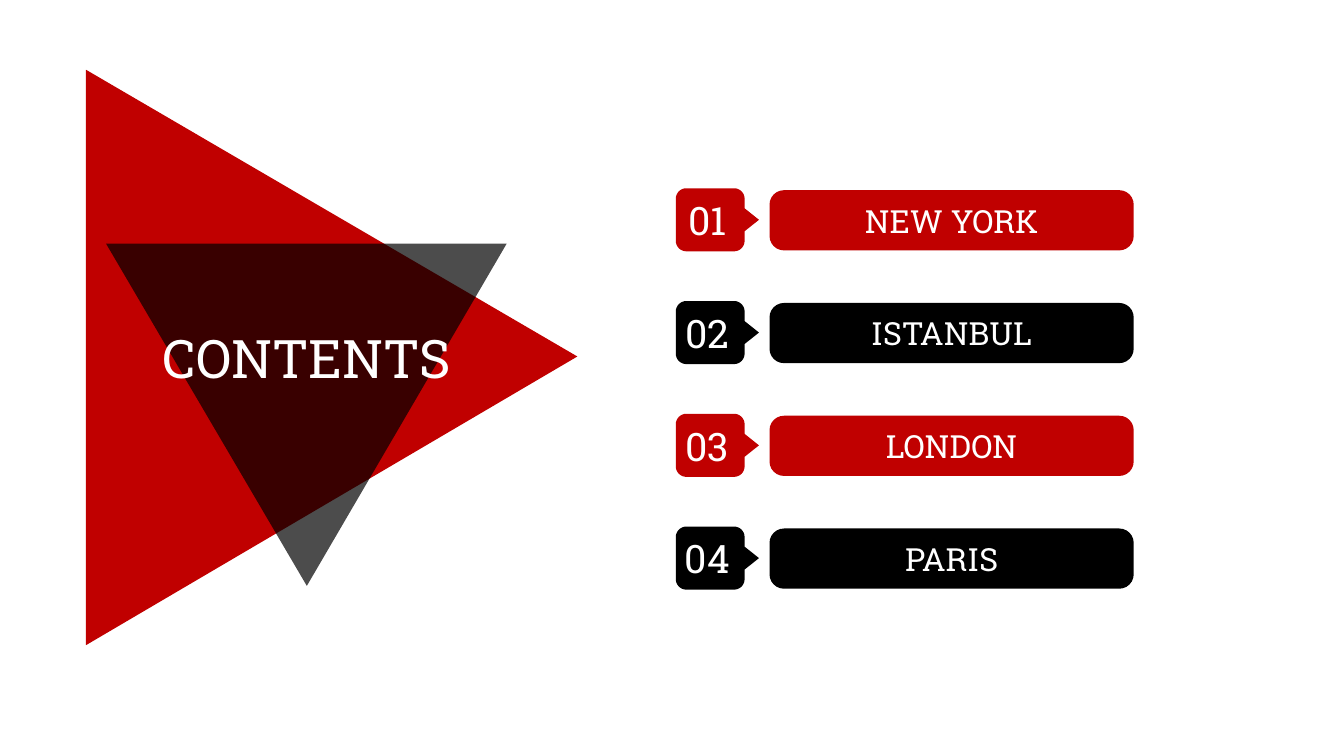
import math
from lxml import etree
from pptx import Presentation
from pptx.dml.color import RGBColor
from pptx.enum import shapes, text
from pptx.oxml import ns
from pptx.util import Inches, Pt

RED = RGBColor(0xC0, 0x00, 0x00)
BLACK = RGBColor(0x00, 0x00, 0x00)
WHITE = RGBColor(0xFF, 0xFF, 0xFF)
FONT = "Roboto Slab"

prs = Presentation()
prs.slide_width, prs.slide_height = Inches(14.06), Inches(7.91)
slide = prs.slides.add_slide(prs.slide_layouts[6])


def add_outline(points, color):
    """Draw a closed, filled polygon through points given in inches."""
    corners = [(Inches(x), Inches(y)) for x, y in points]
    builder = slide.shapes.build_freeform(*corners[0])
    builder.add_line_segments(corners[1:], close=True)
    outline = builder.convert_to_shape()
    outline.shadow.inherit = False
    outline.fill.solid()
    outline.fill.fore_color.rgb = color
    outline.line.fill.background()
    return outline


def write(shape, words, size, insets=(0, 0, 0, 0)):
    """Put one centred white line of text in a shape."""
    frame = shape.text_frame
    sides = ("left", "top", "right", "bottom")
    for side, inset in zip(sides, insets):
        setattr(frame, f"margin_{side}", Inches(inset))
    frame.word_wrap = True
    frame.vertical_anchor = text.MSO_ANCHOR.MIDDLE
    paragraph = frame.paragraphs[0]
    paragraph.alignment = text.PP_ALIGN.CENTER
    run = paragraph.add_run()
    run.text = words
    for key, value in {"name": FONT, "size": Pt(size)}.items():
        setattr(run.font, key, value)
    run.font.color.rgb = WHITE


# Overlapping triangles, the front one at 70% opacity
add_outline([(0.9, 6.75), (0.9, 0.73), (6.04, 3.73)], RED)
veil = add_outline([(1.11, 2.55), (5.3, 2.55), (3.21, 6.13)], BLACK)
veil_color = veil.fill._xPr.find(ns.qn("a:solidFill"))[0]
etree.SubElement(veil_color, ns.qn("a:alpha"), val="70000")

# Numbered cities
TAG_LEFT, TAG_RIGHT, TAG_TIP = 7.07, 7.79, 7.94
TAG_TOP, TAG_HEIGHT, RADIUS = 1.97, 0.66, 0.11
PITCH = 1.18
ARC_STEPS = 8

for index, city in enumerate(["NEW YORK", "ISTANBUL", "LONDON", "PARIS"]):
    color = BLACK if index % 2 else RED
    top = TAG_TOP + index * PITCH
    middle = top + TAG_HEIGHT / 2

    # City bar
    bar = slide.shapes.add_shape(
        shapes.MSO_SHAPE.ROUNDED_RECTANGLE,
        Inches(8.05), Inches(top + 0.02), Inches(3.81), Inches(0.63))
    bar.adjustments[0] = 0.24
    bar.shadow.inherit = False
    bar.fill.solid()
    bar.fill.fore_color.rgb = color
    bar.line.fill.background()
    write(bar, city, 24)

    # Rounded number tag with a pointer on its right side
    left_x, right_x = TAG_LEFT + RADIUS, TAG_RIGHT - RADIUS
    top_y, bottom_y = top + RADIUS, top + TAG_HEIGHT - RADIUS
    arc_centers = [(right_x, bottom_y), (left_x, bottom_y),
                   (left_x, top_y), (right_x, top_y)]
    points = [(TAG_RIGHT, middle - 0.12), (TAG_TIP, middle),
              (TAG_RIGHT, middle + 0.12)]
    for quarter, (x, y) in enumerate(arc_centers):
        for step in range(ARC_STEPS + 1):
            angle = math.pi / 2 * (quarter + step / ARC_STEPS)
            points.append((x + RADIUS * math.cos(angle),
                           y + RADIUS * math.sin(angle)))
    tag = add_outline(points, color)
    write(tag, f"{index + 1:02}", 29.5, (0, 0.05, 0.21, 0.05))

# Title over the triangles
title = slide.shapes.add_textbox(
    Inches(1.5), Inches(3.4), Inches(3.42), Inches(0.67))
write(title, "CONTENTS", 40)

prs.save("out.pptx")
